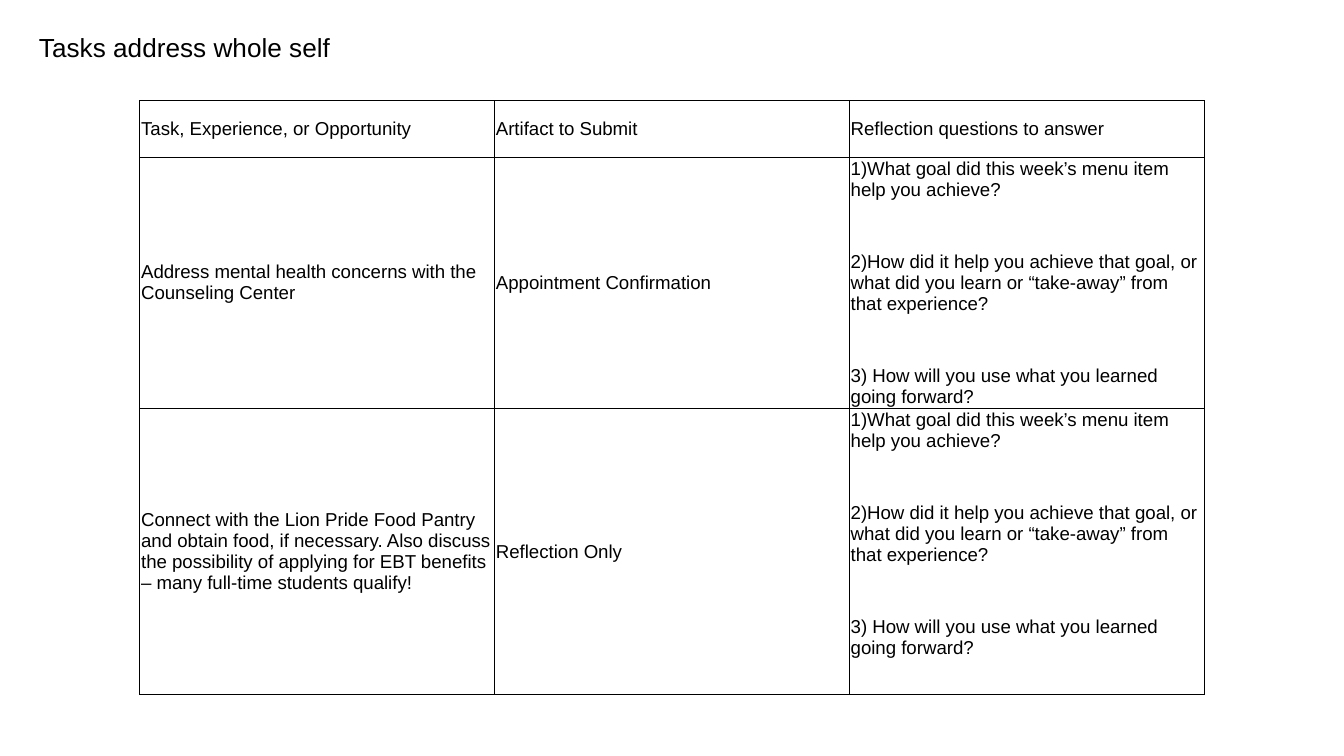
import pptx
import pptx.dml.color
import pptx.enum.text
import pptx.oxml
import pptx.oxml.ns
import pptx.util

Inches = pptx.util.Inches
Pt = pptx.util.Pt
BLACK = pptx.dml.color.RGBColor(0x00, 0x00, 0x00)
MIDDLE = pptx.enum.text.MSO_ANCHOR.MIDDLE
TOP = pptx.enum.text.MSO_ANCHOR.TOP

QUESTIONS = [
    "1)What goal did this week’s menu item help you achieve?",
    "2)How did it help you achieve that goal, or what did you learn or “take-away” from that experience?",
    "3) How will you use what you learned going forward?",
]
ROWS = [
    ["Task, Experience, or Opportunity", "Artifact to Submit", "Reflection questions to answer"],
    ["Address mental health concerns with the Counseling Center", "Appointment Confirmation", QUESTIONS],
    ["Connect with the Lion Pride Food Pantry and obtain food, if necessary. Also discuss the "
     "possibility of applying for EBT benefits – many full-time students qualify!",
     "Reflection Only", QUESTIONS],
]
ROW_HEIGHTS = [0.42, 1.85, 2.13]
COLUMN_WIDTH = 2.64


class SlideBuilder:
    font = "Arial"
    title_size = 14
    cell_size = 10
    cell_margin = 0.01
    question_gap = 27.5
    border_width = 0.75

    def __init__(self, slide):
        self.s = slide

    def format_runs(self, p, size):
        for r in p.runs:
            r.font.name = self.font
            r.font.size = Pt(size)
            r.font.color.rgb = BLACK

    def set_margins(self, obj, margin):
        obj.margin_left = obj.margin_right = Inches(margin)
        obj.margin_top = obj.margin_bottom = Inches(margin)

    def title(self, text, left, top, width, height):
        sp = self.s.shapes.title
        sp.left, sp.top = Inches(left), Inches(top)
        sp.width, sp.height = Inches(width), Inches(height)
        tf = sp.text_frame
        tf.text = text
        tf.word_wrap = True
        tf.auto_size = pptx.enum.text.MSO_AUTO_SIZE.NONE
        tf.vertical_anchor = TOP
        self.set_margins(tf, 0.1)
        p = tf.paragraphs[0]
        p.alignment = pptx.enum.text.PP_ALIGN.LEFT
        self.format_runs(p, self.title_size)

    def borders(self, cell):
        tcPr = cell._tc.get_or_add_tcPr()
        for side in ("lnL", "lnR", "lnT", "lnB"):
            tcPr.append(pptx.oxml.parse_xml(
                f'<a:{side} {pptx.oxml.ns.nsdecls("a")} w="{Pt(self.border_width)}">'
                f'<a:solidFill><a:srgbClr val="{BLACK}"/></a:solidFill></a:{side}>'))

    def cell(self, cell, content):
        is_list = isinstance(content, list)
        cell.text = "\n".join(content) if is_list else content
        cell.vertical_anchor = TOP if is_list else MIDDLE
        self.set_margins(cell, self.cell_margin)
        for i, p in enumerate(cell.text_frame.paragraphs):
            if i:
                p.space_before = Pt(self.question_gap)
            self.format_runs(p, self.cell_size)
        self.borders(cell)
        cell.fill.background()

    def table(self, rows, left, top, column_width, heights):
        columns = len(rows[0])
        table = self.s.shapes.add_table(
            len(rows), columns, Inches(left), Inches(top),
            Inches(column_width * columns), Inches(sum(heights))).table
        table.first_row = table.horz_banding = False
        for column in table.columns:
            column.width = Inches(column_width)
        for i, row in enumerate(rows):
            table.rows[i].height = Inches(heights[i])
            for j, content in enumerate(row):
                self.cell(table.cell(i, j), content)


def main():
    # Widescreen 16:9 page
    prs = pptx.Presentation()
    prs.slide_width = Inches(10)
    prs.slide_height = prs.slide_width * 9 // 16
    builder = SlideBuilder(prs.slides.add_slide(prs.slide_layouts[5]))

    # Task table
    builder.table(ROWS, 1.04, 0.75, COLUMN_WIDTH, ROW_HEIGHTS)

    # Title
    builder.title("Tasks address whole self", 0.19, 0.13, 7.56, 0.44)

    prs.save("out.pptx")


if __name__ == "__main__":
    main()
